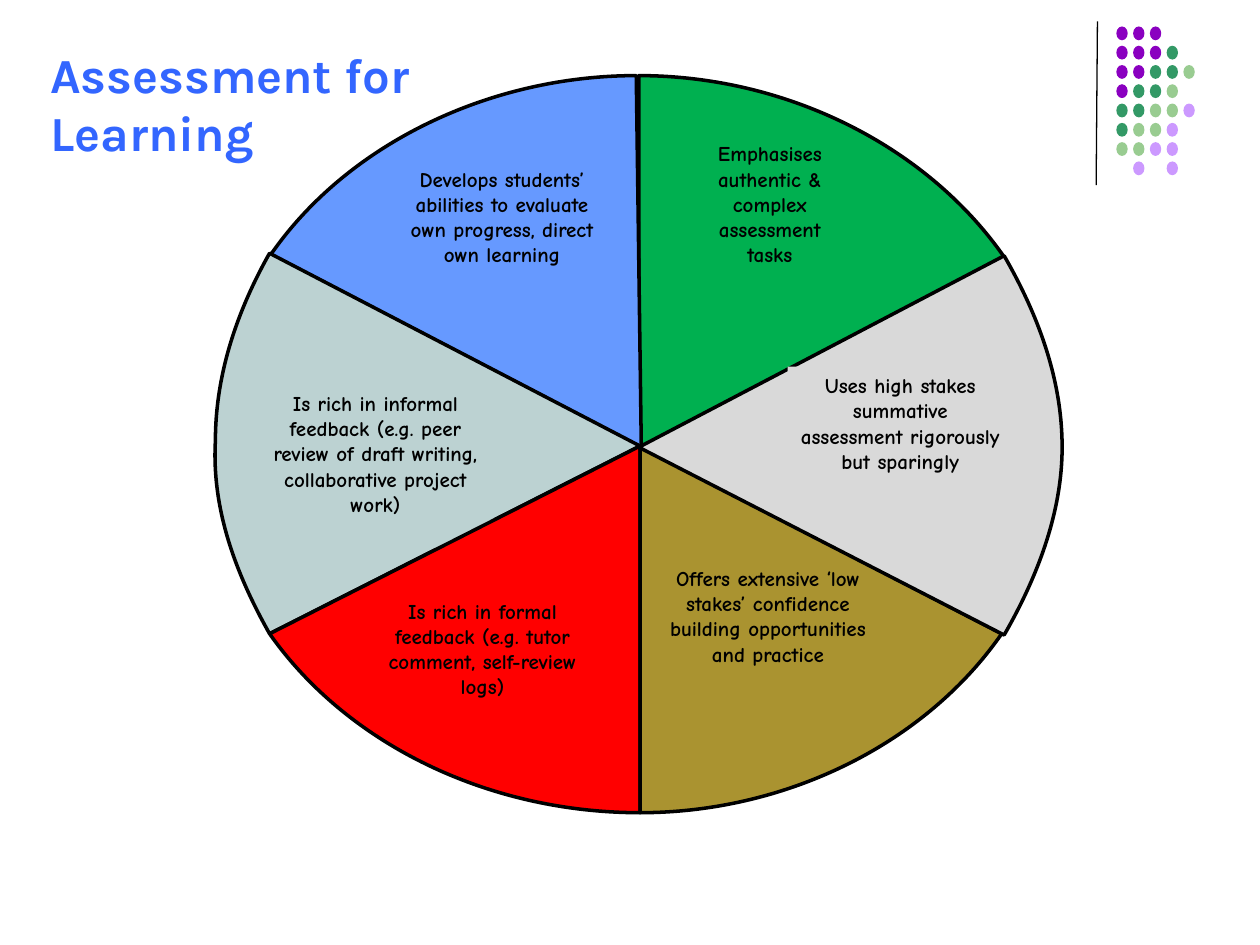
from pptx import Presentation
from pptx.dml.color import RGBColor
from pptx.enum import shapes, text
from pptx.oxml.ns import qn
from pptx.util import Inches, Pt
from lxml import etree

# Content
TITLE = "Assessment for Learning"
TITLE_AREA = (0.3, 0.3, 3.64, 1.03)

# Each wedge: fill, hub, rim start, rim curves (two controls and an end),
# label, label area, whether the label box is filled
WEDGES = [
    ("00B050", (5.07, 3.58), (7.97, 2.04),
     [((7.35, 1.15), (6.23, 0.6), (5.07, 0.6))],
     "Emphasises authentic & complex assessment tasks",
     (5.44, 1.07, 1.34, 1.1), True),
    ("6699FF", (5.09, 3.55), (5.05, 0.6),
     [((3.89, 0.6), (2.76, 1.14), (2.15, 2.02))],
     "Develops students’ abilities to evaluate own progress, direct own learning",
     (3.1, 1.27, 1.77, 1.1), False),
    ("BCD2D2", (5.08, 3.54), (2.14, 2.01),
     [((1.87, 2.49), (1.71, 2.99), (1.71, 3.5)),
      ((1.68, 4.04), (1.87, 4.55), (2.14, 5.03))],
     "Is rich in informal feedback (e.g. peer review of draft writing, "
     "collaborative project work)",
     (2.04, 3.05, 1.88, 1.3), True),
    ("FF0000", (5.08, 3.54), (2.14, 5.03),
     [((2.76, 5.91), (3.88, 6.45), (5.08, 6.45))],
     "Is rich in formal feedback (e.g. tutor comment, self-review logs)",
     (2.83, 4.7, 2, 0.9), False),
    ("AA9330", (5.08, 3.54), (5.08, 6.45),
     [((6.23, 6.45), (7.34, 5.91), (7.95, 5.03))],
     "Offers extensive ‘low stakes’ confidence building opportunities and practice",
     (5.19, 4.44, 1.81, 1.1), False),
    ("D9D9D9", (5.07, 3.55), (7.97, 5.04),
     [((8.24, 4.57), (8.43, 4.06), (8.43, 3.55)),
      ((8.43, 3.01), (8.24, 2.5), (7.97, 2.03))],
     "Uses high stakes summative assessment rigorously but sparingly",
     (6.25, 2.91, 1.79, 1.1), True),
]

# Dot ornament, one letter per dot
DOT_COLOURS = {"P": "8A00C0", "G": "339966", "L": "99CC91", "V": "CC99FF"}
DOT_ROWS = ["PPP", "PPPG", "PPGGL", "PGGL", "GGLLV", "GLLV", "LLVV", " V V"]
DOT_LEFT, DOT_TOP = 8.86, 0.21
DOT_STEP_X, DOT_STEP_Y = 0.133, 0.153
DOT_WIDTH, DOT_HEIGHT = 0.09, 0.11


def colour(value):
    return RGBColor.from_string(value)


def inches(values):
    return [Inches(value) for value in values]


def paint(shape, fill, line_width=None):
    shape.shadow.inherit = False
    shape.fill.solid()
    shape.fill.fore_color.rgb = colour(fill)
    if line_width:
        shape.line.color.rgb = colour("000000")
        shape.line.width = Pt(line_width)
    else:
        shape.line.fill.background()


def write(box, words, font, align):
    frame = box.text_frame
    for name, value in {"word_wrap": True, "auto_size": text.MSO_AUTO_SIZE.NONE,
                        "vertical_anchor": text.MSO_ANCHOR.TOP,
                        "margin_left": Inches(0.1), "margin_right": Inches(0.1),
                        "margin_top": Inches(0.05),
                        "margin_bottom": Inches(0.05)}.items():
        setattr(frame, name, value)
    para = frame.paragraphs[0]
    para.alignment = align
    span = para.add_run()
    span.text = words
    for name, value in font.items():
        setattr(span.font, name, value)
    return span


def bend(shape, curve_count):
    """Turn the leading line segments, three at a time, into cubic curves."""
    segments = list(shape._element.iter(qn("a:lnTo")))
    for first in range(0, 3 * curve_count, 3):
        curve, *spare = segments[first:first + 3]
        curve.tag = qn("a:cubicBezTo")
        for segment in spare:
            curve.append(segment[0])
            segment.getparent().remove(segment)


def add_wedge(page, fill, hub, start, curves):
    corners = [point for curve in curves for point in curve] + [hub]
    builder = page.shapes.build_freeform(*inches(start))
    builder.add_line_segments([inches(point) for point in corners], close=True)
    wedge = builder.convert_to_shape()
    bend(wedge, len(curves))
    paint(wedge, fill, 2)


def add_label(page, words, area, fill):
    if fill:
        box = page.shapes.add_shape(shapes.MSO_SHAPE.RECTANGLE, *inches(area))
        paint(box, fill)
    else:
        box = page.shapes.add_textbox(*inches(area))
    font = {"name": "Comic Neue", "size": Pt(12), "bold": True}
    span = write(box, words, font, text.PP_ALIGN.CENTER)
    span.font.color.rgb = colour("000000")


def add_ornament(page):
    rule = page.shapes.add_connector(shapes.MSO_CONNECTOR.STRAIGHT,
                                     *inches((8.71, 0.17, 8.7, 1.47)))
    rule.line.color.rgb = colour("000000")
    rule.line.width = Pt(0.75)
    etree.SubElement(rule._element.spPr, qn("a:effectLst"))
    for row, letters in enumerate(DOT_ROWS):
        for column, letter in enumerate(letters):
            if letter in DOT_COLOURS:
                area = (DOT_LEFT + column * DOT_STEP_X, DOT_TOP + row * DOT_STEP_Y,
                        DOT_WIDTH, DOT_HEIGHT)
                dot = page.shapes.add_shape(shapes.MSO_SHAPE.OVAL, *inches(area))
                paint(dot, DOT_COLOURS[letter])


def main():
    deck = Presentation()
    deck.slide_width, deck.slide_height = Inches(10), Inches(7.5)
    page = deck.slides.add_slide(deck.slide_layouts[5])

    # Title
    title = page.shapes.title
    title.left, title.top, title.width, title.height = inches(TITLE_AREA)
    font = {"name": "Karla", "size": Pt(28), "bold": True}
    span = write(title, TITLE, font, text.PP_ALIGN.LEFT)
    span.font.color.rgb = colour("3366FF")

    add_ornament(page)

    # Wheel: each wedge is followed by its label
    for fill, hub, start, curves, words, area, filled in WEDGES:
        add_wedge(page, fill, hub, start, curves)
        add_label(page, words, area, fill if filled else None)

    deck.save("out.pptx")


if __name__ == "__main__":
    main()
